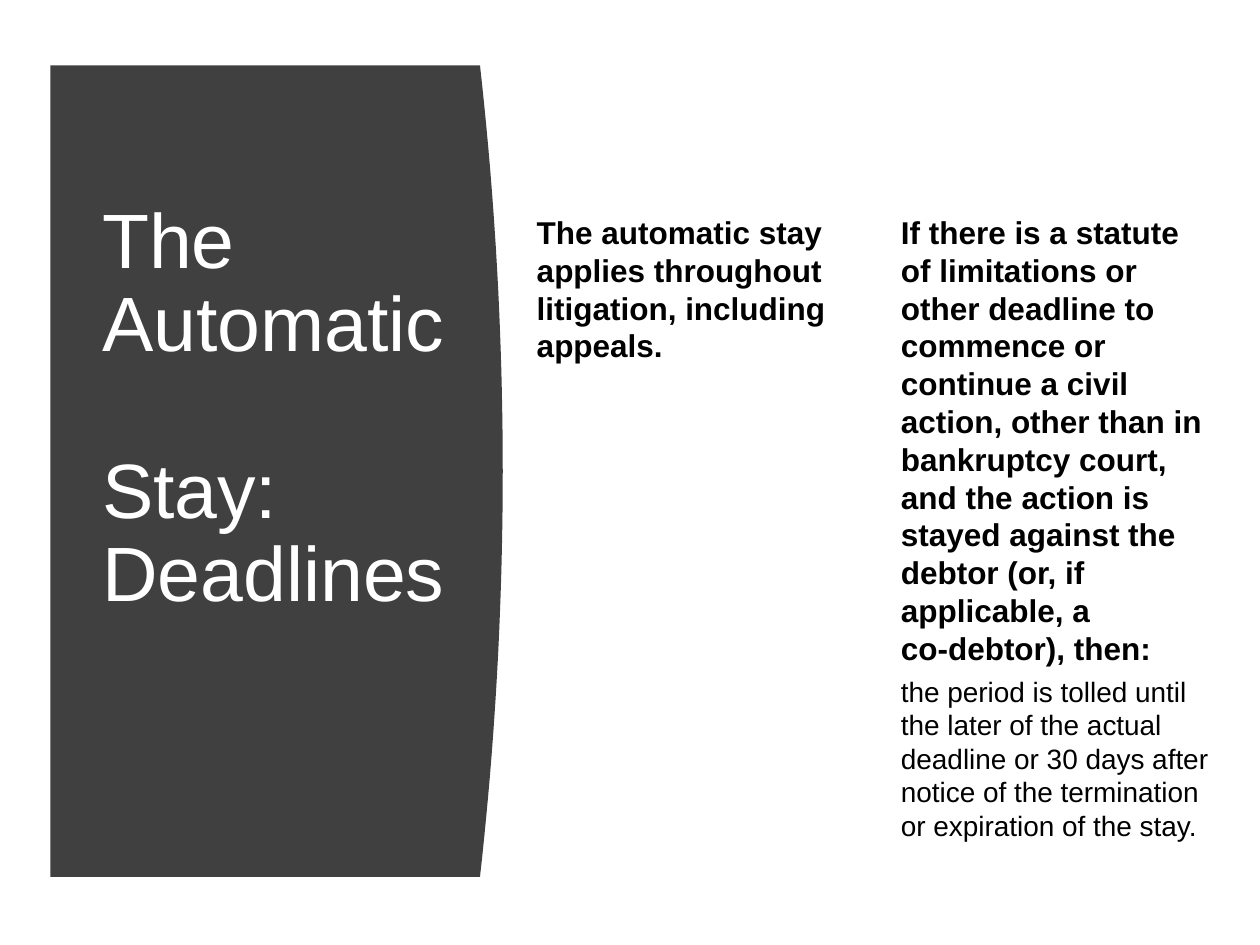
from dataclasses import dataclass

from pptx import Presentation
from pptx.dml.color import RGBColor
from pptx.enum.text import MSO_ANCHOR, MSO_AUTO_SIZE, PP_ALIGN
from pptx.util import Pt


@dataclass(frozen=True)
class Theme:
    font: str = "Arial"
    panel: RGBColor = RGBColor(0x40, 0x40, 0x40)
    light: RGBColor = RGBColor(0xFF, 0xFF, 0xFF)
    dark: RGBColor = RGBColor(0, 0, 0)
    title: int = 44
    lead: int = 18
    detail: int = 16


@dataclass(frozen=True)
class Note:
    left: float
    top: float
    height: float
    text: str
    size: int
    bold: bool


THEME = Theme()
NOTE_WIDTH = 176.4
COL1, COL2 = 306.7, 514.8
NOTES = [
    Note(COL1, 121.7, 274.3,
         "The automatic stay applies throughout litigation, including appeals.",
         THEME.lead, True),
    Note(COL2, 121.7, 274.3,
         "If there is a statute of limitations or other deadline to commence or "
         "continue a civil action, other than in bankruptcy court, and the action "
         "is stayed against the debtor (or, if applicable, a \vco-debtor), then:",
         THEME.lead, True),
    Note(COL2, 385.2, 92.2,
         "the period is tolled until the later of the actual deadline or 30 days "
         "after notice of the termination or expiration of the stay.",
         THEME.detail, False),
]


def write(tf, text: str, *, size: int, color: RGBColor, bold: bool = False,
          spacing: float = 1.0) -> None:
    """Fill a text frame with one formatted paragraph."""
    tf.word_wrap = True
    tf.auto_size = MSO_AUTO_SIZE.NONE
    p = tf.paragraphs[0]
    p.text = text
    p.alignment = PP_ALIGN.LEFT
    p.line_spacing = spacing
    for r in p.runs:
        r.font.name = THEME.font
        r.font.size = Pt(size)
        r.font.bold = bold
        r.font.color.rgb = color


def add_panel(slide, left: float, top: float, side: float, bulge: float,
              height: float, steps: int = 40) -> None:
    """Draw a panel whose right edge is a shallow parabola."""
    edge = []
    for i in range(steps + 1):
        t = i / steps
        x = side + bulge * (1 - (2 * t - 1) ** 2)
        edge.append((Pt(x), Pt(top + height * t)))
    builder = slide.shapes.build_freeform(Pt(left), Pt(top))
    builder.add_line_segments(edge + [(Pt(left), Pt(top + height))], close=True)
    sp = builder.convert_to_shape()
    sp.shadow.inherit = False
    sp.fill.solid()
    sp.fill.fore_color.rgb = THEME.panel
    sp.line.fill.background()


def add_note(slide, note: Note) -> None:
    sp = slide.shapes.add_textbox(Pt(note.left), Pt(note.top),
                                  Pt(NOTE_WIDTH), Pt(note.height))
    tf = sp.text_frame
    tf.margin_left = tf.margin_right = tf.margin_top = tf.margin_bottom = 0
    write(tf, note.text, size=note.size, color=THEME.dark, bold=note.bold)


def main() -> None:
    prs = Presentation()
    prs.slide_width, prs.slide_height = Pt(720), Pt(540)
    slide = prs.slides.add_slide(prs.slide_layouts[5])

    # Dark panel, kept behind the title
    add_panel(slide, left=28.8, top=37.4, side=274.3, bulge=13, height=463.7)
    title = slide.shapes.title
    slide.shapes._spTree.append(title._element)

    # Title, raised by a deep bottom margin
    title.left, title.top = Pt(51.1), Pt(79.9)
    title.width, title.height = Pt(211.7), Pt(377.3)
    tf = title.text_frame
    tf.vertical_anchor = MSO_ANCHOR.MIDDLE
    tf.margin_bottom = Pt(72)
    write(tf, "The Automatic \vStay: Deadlines", size=THEME.title,
          color=THEME.light, spacing=0.9)

    # Notes in two columns
    for note in NOTES:
        add_note(slide, note)

    prs.save("out.pptx")


if __name__ == "__main__":
    main()
